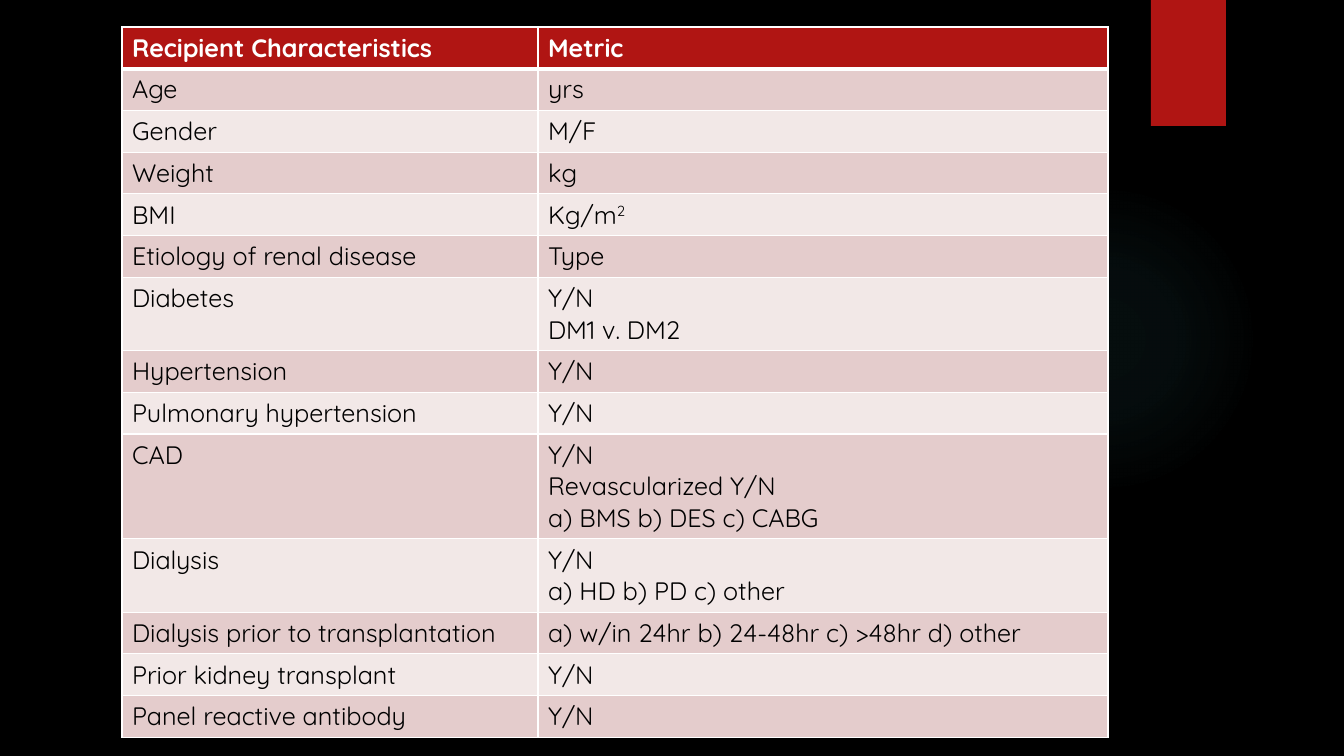
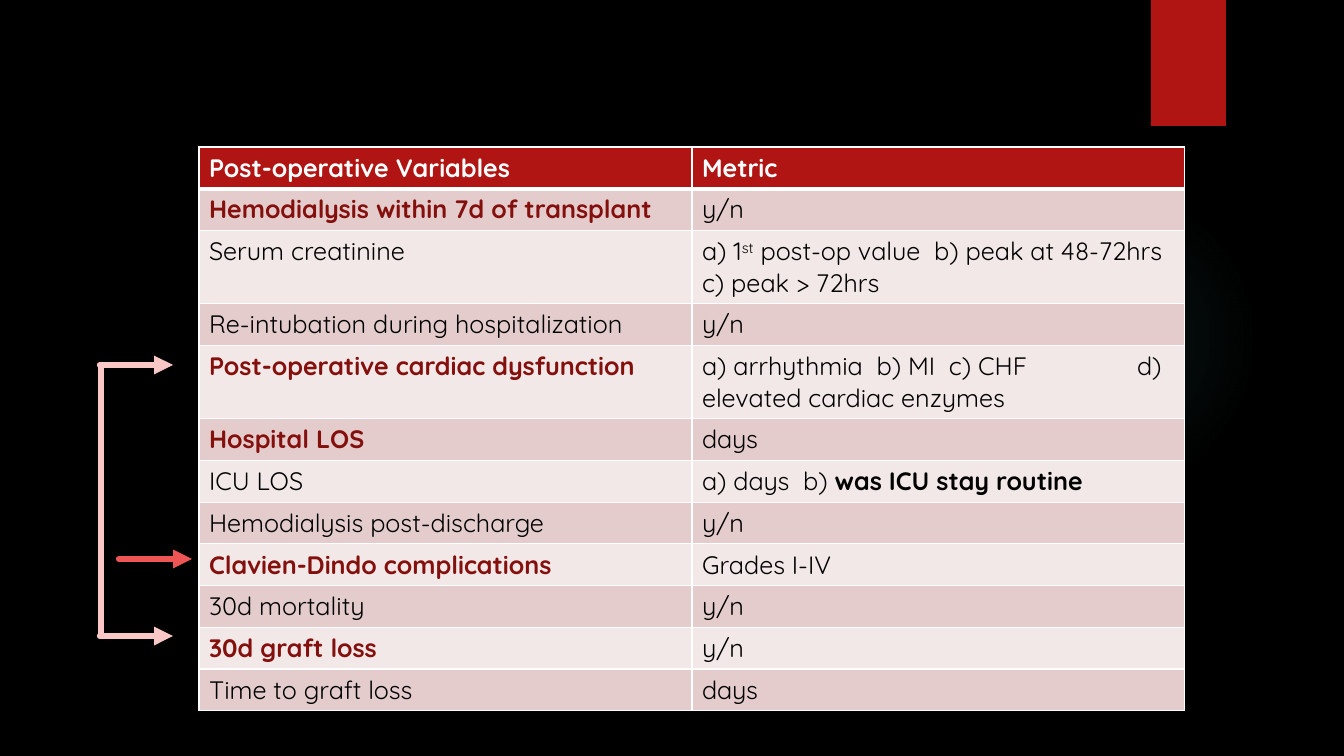
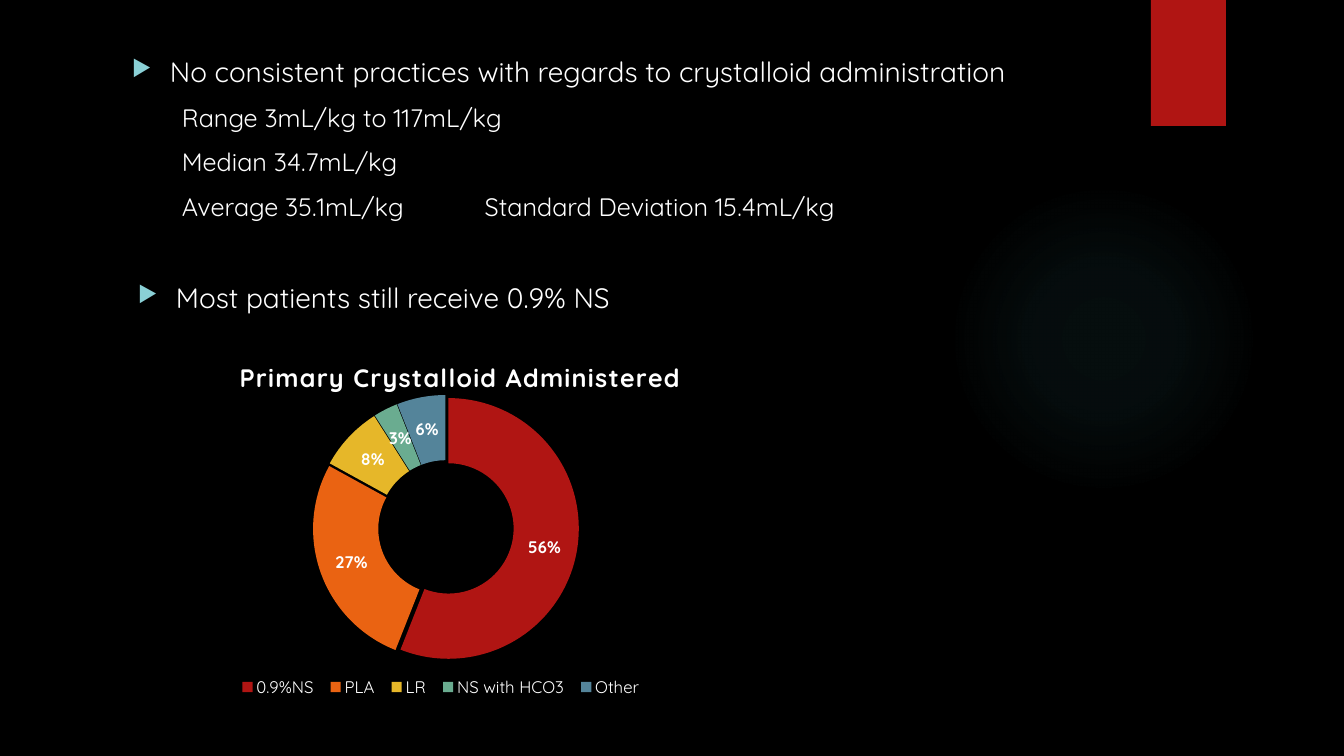
from dataclasses import dataclass

from lxml import etree
from pptx import Presentation
from pptx.chart.data import CategoryChartData
from pptx.dml.color import RGBColor
from pptx.enum.chart import XL_CHART_TYPE, XL_LEGEND_POSITION
from pptx.enum.shapes import MSO_CONNECTOR, MSO_SHAPE
from pptx.oxml import parse_xml
from pptx.oxml.ns import nsdecls, qn
from pptx.util import Emu, Pt

DONUT = XL_CHART_TYPE.DOUGHNUT
BOTTOM = XL_LEGEND_POSITION.BOTTOM
STRAIGHT = MSO_CONNECTOR.STRAIGHT
OVAL, RECT = MSO_SHAPE.OVAL, MSO_SHAPE.RECTANGLE
BLANK = 6
SCALE = 12192000 / 1344
ROW = 41
CHART = (122, 341, 676, 378)


@dataclass(frozen=True)
class Theme:
    font: str = "Quicksand"
    signs: str = "OpenSymbol"
    back: str = "000000"
    ink: str = "000000"
    light: str = "FFFFFF"
    red: str = "B01513"
    key: str = "84100E"
    bands: tuple = ("F2E8E7", "E4CCCC")
    glow: str = "50B9C1"
    mark: str = "8AD0D6"
    pale: str = "F9C7C6"
    coral: str = "ED5654"
    slices: tuple = ("B01513", "EA6312", "E6B729", "6AAC90", "54849A")
    lead: int = 20
    body: int = 18
    small: int = 12
    tiny: int = 10


T = Theme()

RECIPIENT = [
    ("Recipient Characteristics", "Metric"),
    ("Age", "yrs"),
    ("Gender", "M/F"),
    ("Weight", "kg"),
    ("BMI", [("Kg/m", ""), ("2", "sup")]),
    ("Etiology of renal disease", "Type"),
    ("Diabetes", "Y/N\nDM1 v. DM2"),
    ("Hypertension", "Y/N"),
    ("Pulmonary hypertension", "Y/N"),
    ("CAD", "Y/N\nRevascularized Y/N\na) BMS b) DES c) CABG"),
    ("Dialysis", "Y/N\na) HD b) PD c) other"),
    ("Dialysis prior to transplantation",
     "a) w/in 24hr b) 24-48hr c) >48hr d) other"),
    ("Prior kidney transplant", "Y/N"),
    ("Panel reactive antibody", "Y/N"),
]

POSTOP = [
    ("Post-operative Variables", "Metric"),
    ([("Hemodialysis within 7d of transplant", "key")], "y/n"),
    ("Serum creatinine",
     [("a) 1", ""), ("st", "sup"),
      (" post-op value  b) peak at 48-72hrs  c) peak > 72hrs", "")]),
    ("Re-intubation during hospitalization", "y/n"),
    ([("Post-operative cardiac dysfunction", "key")],
     "a) arrhythmia  b) MI  c) CHF\td) elevated cardiac enzymes"),
    ([("Hospital LOS", "key")], "days"),
    ("ICU LOS", [("a) days  b) ", ""), ("was ICU stay routine", "bold")]),
    ("Hemodialysis post-discharge", "y/n"),
    ([("Clavien-Dindo complications", "key")], "Grades I-IV"),
    ("30d mortality", "y/n"),
    ([("30d graft loss", "key")], "y/n"),
    ("Time to graft loss", "days"),
]

FLUIDS = [("0.9%NS", 56), ("PLA", 27), ("LR", 8),
          ("NS with HCO3", 3), ("Other", 6)]


def px(*sizes):
    return [Emu(round(size * SCALE)) for size in sizes]


def rgb(color):
    return RGBColor.from_string(color)


def paint(fill, color):
    fill.solid()
    fill.fore_color.rgb = rgb(color)


def style(font, size, color, bold=False):
    font.name = T.font
    font.size = Pt(size)
    font.bold = bold
    font.color.rgb = rgb(color)


def add_run(para, text, size, color, kind=""):
    run = para.add_run()
    run.text = text
    style(run.font, size, T.key if kind == "key" else color,
          kind in ("key", "bold"))
    if kind == "sup":
        run._r.get_or_add_rPr().set("baseline", "30000")


def add_tab(para, stop):
    tabs = etree.SubElement(para._p.get_or_add_pPr(), qn("a:tabLst"))
    etree.SubElement(tabs, qn("a:tab"), pos=str(px(stop)[0]), algn="l")


def add_mark(para):
    """Give the paragraph the triangle bullet."""
    props = para._p.get_or_add_pPr()
    tint = etree.SubElement(props, qn("a:buClr"))
    etree.SubElement(tint, qn("a:srgbClr"), val=T.mark)
    etree.SubElement(props, qn("a:buSzPct"), val="80000")
    etree.SubElement(props, qn("a:buFont"), typeface=T.signs)
    etree.SubElement(props, qn("a:buChar"), char="▶")


def plain(shapes, kind, box):
    shape = shapes.add_shape(kind, *px(*box))
    shape.shadow.inherit = False
    shape.line.fill.background()
    return shape


def add_frame(master, shapes):
    """Put the background, glow and red tab on the master."""
    paint(master.background.fill, T.back)
    glow = plain(shapes, OVAL, (949, 184, 310, 310))
    stops = "".join(
        f'<a:gs pos="{pos}000"><a:srgbClr val="{T.glow}">'
        f'<a:alpha val="{alpha}000"/></a:srgbClr></a:gs>'
        for pos, alpha in ((0, 7), (36, 6), (69, 0)))
    grad = parse_xml(
        f'<a:gradFill {nsdecls("a")}><a:gsLst>{stops}</a:gsLst>'
        '<a:path path="circle"><a:fillToRect l="50000" t="50000" '
        'r="50000" b="50000"/></a:path></a:gradFill>')
    glow._element.spPr.find(qn("a:prstGeom")).addnext(grad)
    tab = plain(shapes, RECT, (1151, 0, 75, 126))
    paint(tab.fill, T.red)
    for num, shape in enumerate((glow, tab), 101):
        shape._element.nvSpPr.cNvPr.set("id", str(num))
        master.shapes._spTree.append(shape._element)


def add_edges(cell, row):
    props = cell._tc.get_or_add_tcPr()
    widths = {"L": 1, "R": 1, "T": 3 if row == 1 else 1,
              "B": 3 if row == 0 else 1}
    for side, width in widths.items():
        edge = etree.SubElement(props, qn(f"a:ln{side}"), w=str(Pt(width)))
        fill = etree.SubElement(edge, qn("a:solidFill"))
        etree.SubElement(fill, qn("a:srgbClr"), val=T.light)


def fill_cell(cell, content, row, stop):
    add_edges(cell, row)
    paint(cell.fill, T.bands[row % 2] if row else T.red)
    color, kind = (T.ink, "") if row else (T.light, "bold")
    if isinstance(content, str):
        lines = [[(text, kind)] for text in content.split("\n")]
    else:
        lines = [content]
    frame = cell.text_frame
    for num, runs in enumerate(lines):
        para = frame.add_paragraph() if num else frame.paragraphs[0]
        if any("\t" in text for text, _ in runs):
            add_tab(para, stop)
        for text, look in runs:
            add_run(para, text, T.body, color, look)


def add_grid(slide, left, top, widths, rows, stop=0):
    box = px(left, top, sum(widths), ROW * len(rows))
    table = slide.shapes.add_table(len(rows), len(widths), *box).table
    for col, width in zip(table.columns, px(*widths)):
        col.width = width
    for num, row in enumerate(rows):
        table.rows[num].height = px(ROW)[0]
        for col, content in enumerate(row):
            fill_cell(table.cell(num, col), content, num, stop)


def add_line(slide, ends, color, arrow=True):
    line = slide.shapes.add_connector(STRAIGHT, *px(*ends))
    line.line.width = Pt(4.5)
    line.line.color.rgb = rgb(color)
    pen = line.line._get_or_add_ln()
    pen.set("cap", "rnd")
    if arrow:
        etree.SubElement(pen, qn("a:tailEnd"), type="triangle")
    etree.SubElement(line._element.spPr, qn("a:effectLst"))


def add_notes(slide):
    """Write the findings: text, size, margin, indent, gap in points."""
    frame = slide.shapes.add_textbox(*px(122, 50, 986, 300)).text_frame
    frame.word_wrap = True
    lines = [
        ("No consistent practices with regards to crystalloid administration",
         T.lead, 38, -38, 0),
        ("Range 3mL/kg to 117mL/kg", T.body, 0, 50, 10),
        ("Median 34.7mL/kg", T.body, 0, 50, 10),
        ("Average 35.1mL/kg\t\tStandard Deviation 15.4mL/kg",
         T.body, 0, 50, 10),
        ("Most patients still receive 0.9% NS", T.lead, 44, -38, 42),
    ]
    for num, (text, size, margin, indent, gap) in enumerate(lines):
        para = frame.add_paragraph() if num else frame.paragraphs[0]
        props = para._p.get_or_add_pPr()
        for name, value in zip(("marL", "indent"), px(margin, indent)):
            props.set(name, str(value))
        if indent < 0:
            add_mark(para)
        para.space_before = Pt(gap)
        add_run(para, text, size, T.light)


def place(parent, index, box, inner=False):
    """Lay out a chart part by hand: left, top, and maybe width, height."""
    for old in parent.findall(qn("c:layout")):
        parent.remove(old)
    layout = etree.Element(qn("c:layout"))
    manual = etree.SubElement(layout, qn("c:manualLayout"))
    if inner:
        etree.SubElement(manual, qn("c:layoutTarget"), val="inner")
    for side in ("x", "y"):
        etree.SubElement(manual, qn(f"c:{side}Mode"), val="edge")
    for name, size, whole in zip("xywh", box, CHART[2:] * 2):
        etree.SubElement(manual, qn(f"c:{name}"), val=f"{size / whole:.4f}")
    parent.insert(index, layout)


def add_donut(slide):
    data = CategoryChartData()
    data.categories = [name for name, _ in FLUIDS]
    data.add_series("Series 1", [value for _, value in FLUIDS])
    chart = slide.shapes.add_chart(DONUT, *px(*CHART), data).chart
    style(chart.font, T.tiny, T.light)

    chart.has_title = True
    para = chart.chart_title.text_frame.paragraphs[0]
    add_run(para, "Primary Crystalloid Administered", T.body, T.light, "bold")
    para.runs[0]._r.get_or_add_rPr().set("spc", "90")
    place(chart.chart_title._element, 1, (113, 14))

    chart.has_legend = True
    chart.legend.position = BOTTOM
    chart.legend.include_in_layout = False
    style(chart.legend.font, T.small, T.light)
    place(chart.legend._element, 1, (109, 331, 420, 30))

    plot = chart.plots[0]
    plot.vary_by_categories = True
    place(chart._chartSpace.chart.plotArea, 0, (191, 54, 266, 266), True)
    series = plot.series[0]
    burst = etree.Element(qn("c:explosion"), val="4")
    series._element.find(qn("c:tx")).addnext(burst)
    for num, color in enumerate(T.slices):
        look = series.points[num].format
        paint(look.fill, color)
        look.line.fill.background()
    labels = series.data_labels
    labels.show_value = False
    labels.show_percentage = True
    labels.number_format = "0%"
    labels.number_format_is_linked = False
    style(labels.font, T.small, T.light, True)


def main():
    prs = Presentation()
    prs.slide_width, prs.slide_height = px(1344, 756)
    first, second, third = [
        prs.slides.add_slide(prs.slide_layouts[BLANK]) for _ in range(3)]
    add_frame(prs.slide_master, first.shapes)

    add_grid(first, 122, 27, (416, 570), RECIPIENT)

    add_grid(second, 199, 147, (493, 493), POSTOP, stop=435)
    add_line(second, (101, 365, 101, 636), T.pale, arrow=False)
    for left, level, color in ((100, 365, T.pale), (100, 636, T.pale),
                               (119, 559, T.coral)):
        add_line(second, (left, level, left + 73, level), color)

    add_notes(third)
    add_donut(third)
    prs.save("out.pptx")


if __name__ == "__main__":
    main()
